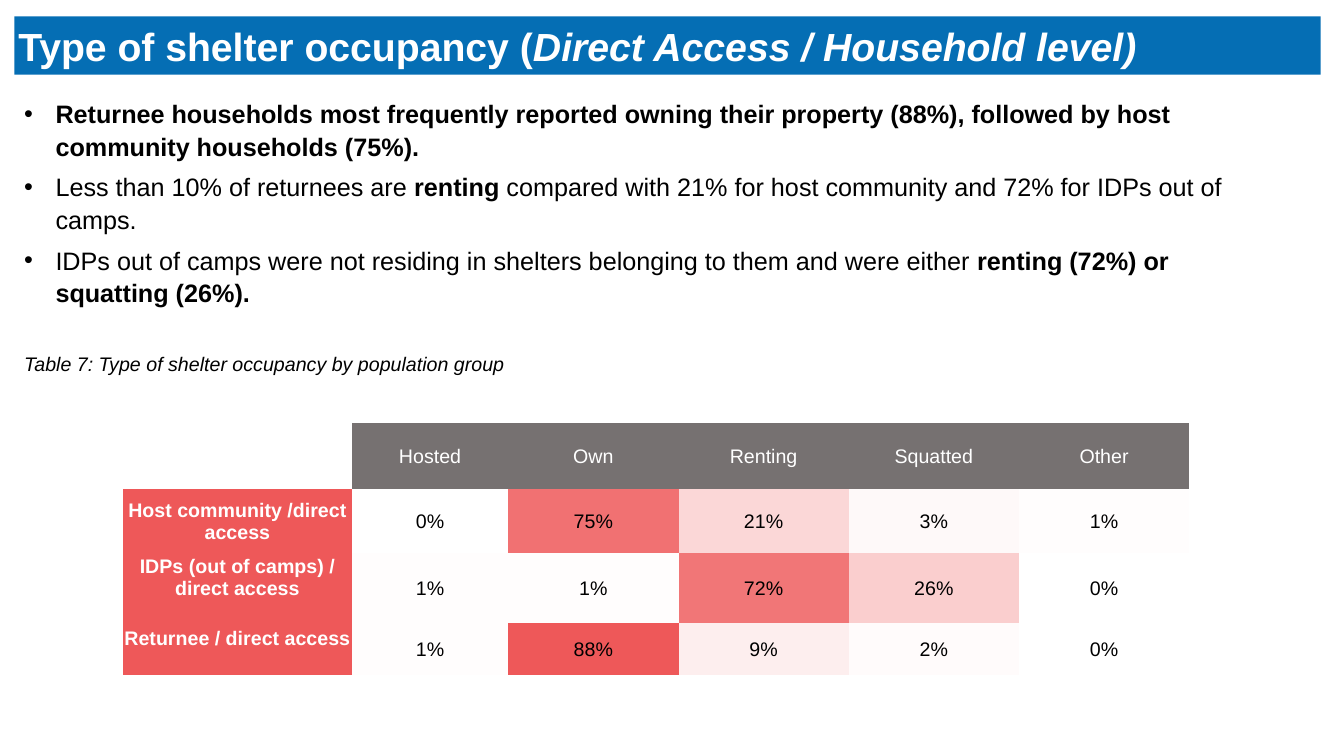
from lxml.etree import SubElement
from pptx import Presentation
from pptx.dml.color import RGBColor
from pptx.enum.text import MSO_ANCHOR, MSO_AUTO_SIZE, PP_ALIGN
from pptx.oxml.ns import qn
from pptx.util import Cm, Pt

BLUE = RGBColor(0x05, 0x6E, 0xB4)
RED = RGBColor(0xEE, 0x58, 0x59)
GREY = RGBColor(0x76, 0x71, 0x71)
WHITE = RGBColor(0xFF, 0xFF, 0xFF)
BLACK = RGBColor(0x00, 0x00, 0x00)

NO_TABLE_STYLE = "{2D5ABB26-0587-4C30-8999-92F81FD0307C}"
LEFT = Cm(0.36)

BULLETS = [
    [("Returnee households most frequently reported owning their property (88%), "
      "followed by host community households (75%).", True)],
    [("Less than 10% of returnees are ", False), ("renting", True),
     (" compared with 21% for host community and 72% for IDPs out of camps.", False)],
    [("IDPs out of camps were not residing in shelters belonging to them and were either ", False),
     ("renting (72%) or squatting (26%).", True)],
]

OCCUPANCY_TYPES = ["Hosted", "Own", "Renting", "Squatted", "Other"]
# Label, percentages, and bottom margin of the label in cm
GROUPS = [
    ("Host community /direct access", [0, 75, 21, 3, 1], 0),
    ("IDPs (out of camps) / direct access", [1, 1, 72, 26, 0], 0.55),
    ("Returnee / direct access", [1, 88, 9, 2, 0], 0.55),
]
HIGHEST = max(value for _, values, _ in GROUPS for value in values)
COLUMN_WIDTHS = [5.77, 3.94] + [4.29] * 4
ROW_HEIGHTS = [1.65, 1.61, 1.78, 1.3]


def apply(target, formats):
    for name, value in formats.items():
        setattr(target, name, value)


def add_run(paragraph, text, size, color, bold=False, italic=False):
    run = paragraph.add_run()
    run.text = text
    apply(run.font, {"name": "Arial", "size": Pt(size), "bold": bold, "italic": italic})
    run.font.color.rgb = color


def set_indent(paragraph, left, first_line):
    properties = paragraph._p.get_or_add_pPr()
    properties.set("marL", str(Cm(left)))
    properties.set("indent", str(Cm(first_line)))
    return properties


def add_title(slide):
    title = slide.shapes.title
    apply(title, {"left": LEFT, "top": Cm(0.41), "width": Cm(32.92), "height": Cm(1.47)})
    title.fill.solid()
    title.fill.fore_color.rgb = BLUE
    apply(title.text_frame, {
        "margin_left": 0, "margin_top": 0, "margin_right": 0, "margin_bottom": 0,
        "word_wrap": True, "auto_size": MSO_AUTO_SIZE.NONE,
        "vertical_anchor": MSO_ANCHOR.MIDDLE,
    })
    paragraph = title.text_frame.paragraphs[0]
    apply(paragraph, {"alignment": PP_ALIGN.LEFT, "space_before": Pt(8)})
    set_indent(paragraph, 1.07, -0.97)
    add_run(paragraph, "Type of shelter occupancy (", 28, WHITE, bold=True)
    add_run(paragraph, "Direct Access / Household level)", 28, WHITE, bold=True, italic=True)


def add_text_box(slide, top, width, height):
    text_frame = slide.shapes.add_textbox(LEFT, Cm(top), Cm(width), Cm(height)).text_frame
    text_frame.word_wrap = True
    return text_frame


def add_bullets(slide):
    text_frame = add_text_box(slide, 2.31, 31.88, 6.6)
    for index, parts in enumerate(BULLETS):
        paragraph = text_frame.add_paragraph() if index else text_frame.paragraphs[0]
        apply(paragraph, {"line_spacing": 1.07, "space_after": Pt(6)})
        properties = set_indent(paragraph, 0.79, -0.79)
        SubElement(properties, qn("a:buFont"), typeface="Arial")
        SubElement(properties, qn("a:buChar"), char="•")
        for text, bold in parts:
            add_run(paragraph, text, 18, BLACK, bold)


def add_caption(slide):
    paragraph = add_text_box(slide, 8.74, 22.61, 0.86).paragraphs[0]
    paragraph.alignment = PP_ALIGN.JUSTIFY
    add_run(paragraph, "Table 7: Type of shelter occupancy by population group",
            14, BLACK, italic=True)


def heat_color(value):
    """Blend from white at zero to red at the highest percentage."""
    return RGBColor(*(round(255 - (255 - channel) * value / HIGHEST) for channel in RED))


def fill_cell(cell, text, fill, color, bold=False, margin_bottom=0):
    cell.fill.solid()
    cell.fill.fore_color.rgb = fill
    apply(cell, {
        "margin_left": Cm(0.03), "margin_top": Cm(0.03), "margin_right": Cm(0.03),
        "margin_bottom": Cm(margin_bottom), "vertical_anchor": MSO_ANCHOR.MIDDLE,
    })
    paragraph = cell.text_frame.paragraphs[0]
    paragraph.alignment = PP_ALIGN.CENTER
    add_run(paragraph, text, 14, color, bold)


def add_occupancy_table(slide):
    table = slide.shapes.add_table(
        len(ROW_HEIGHTS), len(COLUMN_WIDTHS), Cm(3.1), Cm(10.67),
        Cm(sum(COLUMN_WIDTHS)), Cm(sum(ROW_HEIGHTS))).table
    apply(table, {"first_row": False, "horz_banding": False})
    table._tbl.tblPr.find(qn("a:tableStyleId")).text = NO_TABLE_STYLE
    for column, width in zip(table.columns, COLUMN_WIDTHS):
        column.width = Cm(width)
    for row, height in zip(table.rows, ROW_HEIGHTS):
        row.height = Cm(height)

    table.cell(0, 0).fill.background()
    for column, name in enumerate(OCCUPANCY_TYPES, 1):
        fill_cell(table.cell(0, column), name, GREY, WHITE)
    for row, (label, values, margin_bottom) in enumerate(GROUPS, 1):
        fill_cell(table.cell(row, 0), label, RED, WHITE, True, margin_bottom)
        for column, value in enumerate(values, 1):
            fill_cell(table.cell(row, column), f"{value}%", heat_color(value), BLACK)


def main():
    presentation = Presentation()
    apply(presentation, {"slide_width": Cm(33.87), "slide_height": Cm(19.05)})
    slide = presentation.slides.add_slide(presentation.slide_layouts.get_by_name("Title Only"))
    add_title(slide)
    add_caption(slide)
    add_bullets(slide)
    add_occupancy_table(slide)
    presentation.save("out.pptx")


if __name__ == "__main__":
    main()
